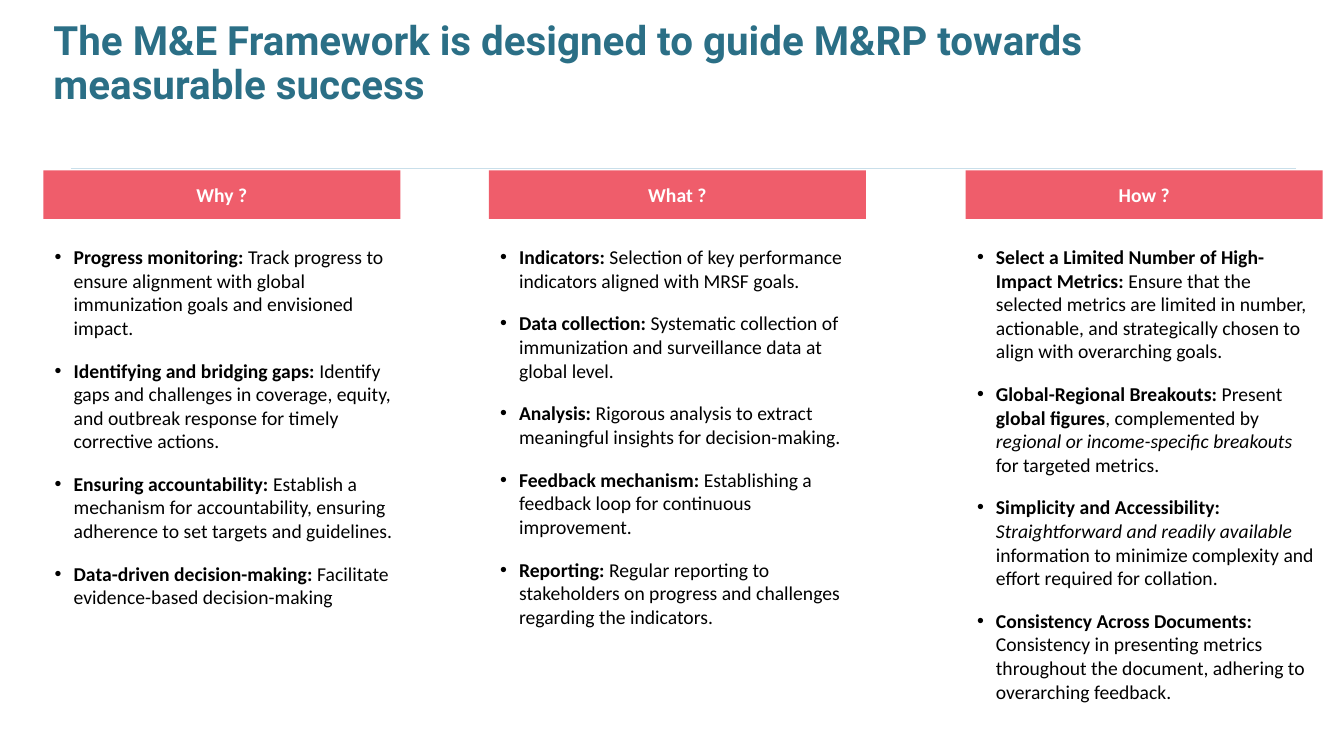
import pptx
import pptx.dml.color
import pptx.enum.shapes
import pptx.enum.text
import pptx.oxml.ns
import pptx.util
from lxml import etree

Pt = pptx.util.Pt
RGBColor = pptx.dml.color.RGBColor
PP_ALIGN = pptx.enum.text.PP_ALIGN
MSO_ANCHOR = pptx.enum.text.MSO_ANCHOR
qn = pptx.oxml.ns.qn

TEAL = RGBColor(0x2B, 0x6F, 0x86)
CORAL = RGBColor(0xEF, 0x5D, 0x6B)
PALE_BLUE = RGBColor(0xC9, 0xDF, 0xEA)
WHITE = RGBColor(0xFF, 0xFF, 0xFF)
BLACK = RGBColor(0x00, 0x00, 0x00)

TITLE = "The M&E Framework is designed to guide M&RP towards measurable success"
PLAIN, BOLD, ITALIC = "plain", "bold", "italic"

WHY = [
    [("Progress monitoring:", BOLD),
     (" Track progress to ensure alignment with global immunization goals "
      "and envisioned impact.", PLAIN)],
    [("Identifying and bridging gaps:", BOLD),
     (" Identify gaps and challenges in coverage, equity, and outbreak "
      "response for timely corrective actions.", PLAIN)],
    [("Ensuring accountability: ", BOLD),
     ("Establish a mechanism for accountability, ensuring adherence to set "
      "targets and guidelines.", PLAIN)],
    [("Data-driven decision-making:", BOLD),
     (" Facilitate evidence-based decision-making", PLAIN)],
]
WHAT = [
    [("Indicators:", BOLD),
     (" Selection of key performance indicators aligned with MRSF goals.", PLAIN)],
    [("Data collection: ", BOLD),
     ("Systematic collection of immunization and surveillance data at "
      "global level.", PLAIN)],
    [("Analysis: ", BOLD),
     ("Rigorous analysis to extract meaningful insights for "
      "decision-making.", PLAIN)],
    [("Feedback mechanism:", BOLD),
     (" Establishing a feedback loop for continuous improvement.", PLAIN)],
    [("Reporting:", BOLD),
     (" Regular reporting to stakeholders on progress and challenges "
      "regarding the indicators.", PLAIN)],
]
HOW = [
    [("Select a Limited Number of High-Impact Metrics: ", BOLD),
     ("Ensure that the selected metrics are limited in number, actionable, "
      "and strategically chosen to align with overarching goals.", PLAIN)],
    [("Global-Regional Breakouts: ", BOLD), ("Present ", PLAIN),
     ("global figures", BOLD), (", complemented by ", PLAIN),
     ("regional or income-specific breakouts ", ITALIC),
     ("for targeted metrics.", PLAIN)],
    [("Simplicity and Accessibility: ", BOLD),
     ("Straightforward and readily available ", ITALIC),
     ("information to minimize complexity and effort required for "
      "collation.", PLAIN)],
    [("Consistency Across Documents: ", BOLD),
     ("Consistency in presenting metrics throughout the document, adhering "
      "to overarching feedback.", PLAIN)],
]
COLUMNS = [
    ("Why ?", 31, 255, WHY),
    ("What ?", 349.2, 269.3, WHAT),
    ("How ?", 689.8, 255, HOW),
]


def style_font(font, name, size, color, bold=False, italic=False):
    font.name = name
    font.size = Pt(size)
    font.color.rgb = color
    font.bold = bold
    font.italic = italic


def set_title(s):
    sp = s.shapes.title
    sp.left, sp.top, sp.width, sp.height = Pt(31), Pt(27.4), Pt(875.5), Pt(53.3)
    tf = sp.text_frame
    tf.text = TITLE
    tf.word_wrap = True
    tf.auto_size = pptx.enum.text.MSO_AUTO_SIZE.NONE
    tf.vertical_anchor = MSO_ANCHOR.BOTTOM
    p = tf.paragraphs[0]
    p.alignment = PP_ALIGN.LEFT
    p.line_spacing = 0.9
    style_font(p.runs[0].font, "Roboto", 28.8, TEAL, bold=True)


def add_rule(s):
    line = s.shapes.add_connector(
        pptx.enum.shapes.MSO_CONNECTOR.STRAIGHT,
        Pt(50.4), Pt(120.4), Pt(926), Pt(120.4))
    line.line.color.rgb = PALE_BLUE
    line.line.width = Pt(0.75)
    etree.SubElement(line._element.spPr, qn("a:effectLst"))


def add_header(s, text, left, width):
    sp = s.shapes.add_shape(
        pptx.enum.shapes.MSO_SHAPE.RECTANGLE,
        Pt(left), Pt(121.7), Pt(width), Pt(34.6))
    sp.shadow.inherit = False
    sp.fill.solid()
    sp.fill.fore_color.rgb = CORAL
    sp.line.fill.background()
    tf = sp.text_frame
    tf.text = text
    tf.vertical_anchor = MSO_ANCHOR.MIDDLE
    p = tf.paragraphs[0]
    p.alignment = PP_ALIGN.CENTER
    style_font(p.runs[0].font, "Calibri", 14, WHITE, bold=True)


def add_bullet(p):
    pPr = p._p.get_or_add_pPr()
    pPr.set("marL", str(Pt(18)))
    pPr.set("indent", str(-Pt(13.5)))
    etree.SubElement(pPr, qn("a:buFont")).set("typeface", "Arial")
    etree.SubElement(pPr, qn("a:buChar")).set("char", "•")


def add_bullets(s, items, left, width):
    tf = s.shapes.add_textbox(Pt(left), Pt(172.8), Pt(width), Pt(291.6)).text_frame
    tf.word_wrap = True
    tf.margin_left = tf.margin_right = Pt(3.6)
    tf.margin_top = tf.margin_bottom = Pt(2.2)
    for i, runs in enumerate(items):
        p = tf.add_paragraph() if i else tf.paragraphs[0]
        add_bullet(p)
        p.space_before = Pt(3.1 if i else 0)
        p.space_after = Pt(10.7)
        for text, style in runs:
            r = p.add_run()
            r.text = text
            style_font(r.font, "Calibri", 14, BLACK, style == BOLD, style == ITALIC)


def main():
    prs = pptx.Presentation()
    prs.slide_width, prs.slide_height = Pt(960), Pt(540)
    s = prs.slides.add_slide(prs.slide_layouts.get_by_name("Title Only"))
    set_title(s)
    add_rule(s)
    for heading, left, width, items in COLUMNS:
        add_header(s, heading, left, width)
        add_bullets(s, items, left, width)
    prs.save("out.pptx")


if __name__ == "__main__":
    main()
